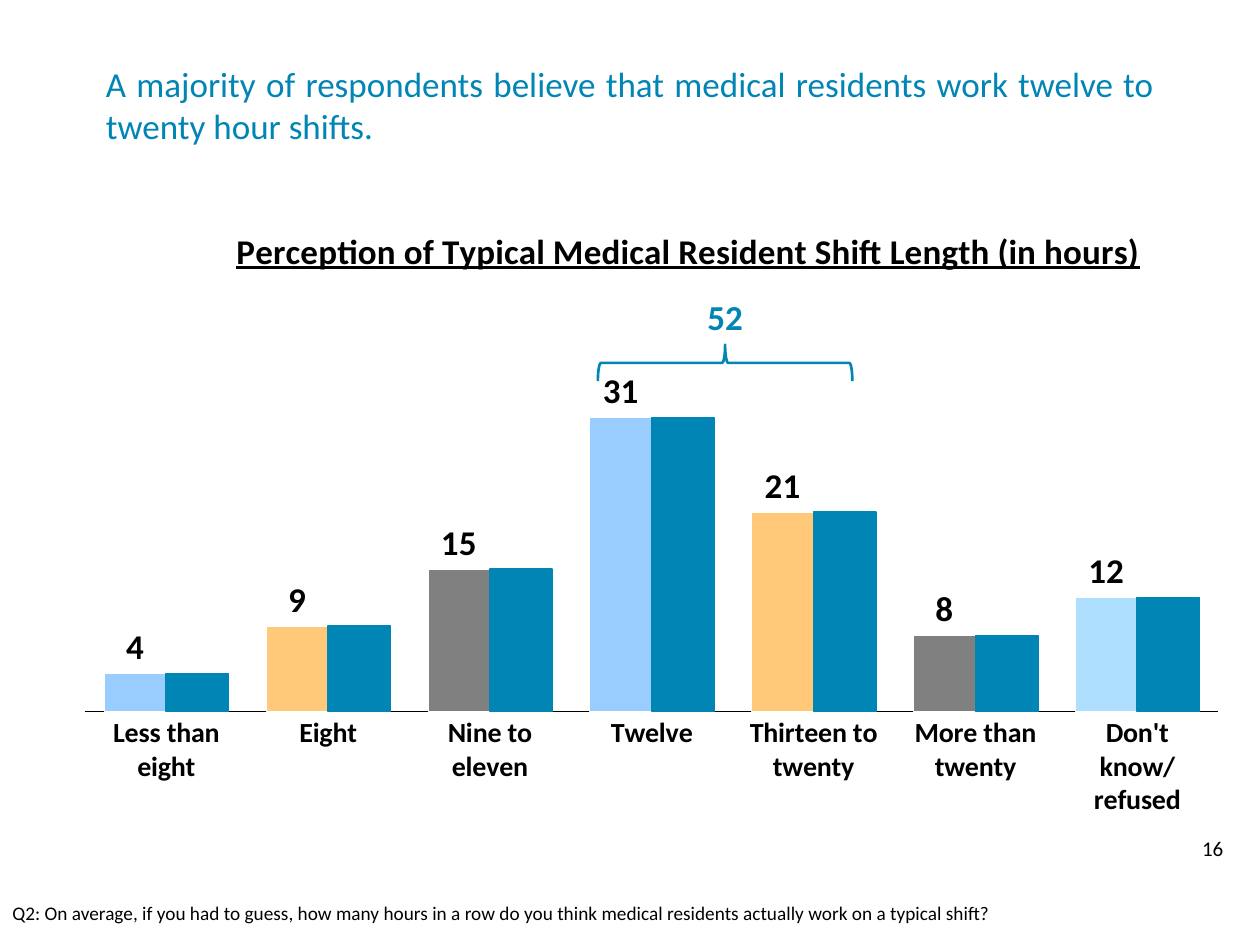
"""Builds the slide on perceived shift length of medical residents."""
from copy import deepcopy

from lxml import etree
from pptx import Presentation
from pptx.chart.data import CategoryChartData
from pptx.dml.color import RGBColor
from pptx.enum.chart import XL_CHART_TYPE, XL_LABEL_POSITION, XL_TICK_MARK
from pptx.enum.shapes import MSO_SHAPE
from pptx.enum.text import MSO_ANCHOR, PP_ALIGN
from pptx.oxml.ns import qn
from pptx.util import Inches, Pt

COLUMN = XL_CHART_TYPE.COLUMN_CLUSTERED
OUTSIDE = XL_LABEL_POSITION.OUTSIDE_END
NO_TICK = XL_TICK_MARK.NONE
RIGHT_BRACE = MSO_SHAPE.RIGHT_BRACE
MIDDLE = MSO_ANCHOR.MIDDLE
LEFT, CENTER, JUSTIFY = PP_ALIGN.LEFT, PP_ALIGN.CENTER, PP_ALIGN.JUSTIFY

FONT = "Calibri"
BLACK = RGBColor(0x00, 0x00, 0x00)
WHITE = RGBColor(0xFF, 0xFF, 0xFF)
TEAL = RGBColor(0x00, 0x85, 0xB4)
PALE = RGBColor(0xAF, 0xDF, 0xFF)
BLUE = RGBColor(0x99, 0xCC, 0xFF)
ORANGE = RGBColor(0xFF, 0xC9, 0x79)
GRAY = RGBColor(0x80, 0x80, 0x80)

SHIFTS = {
    "Less than eight": 4,
    "Eight": 9,
    "Nine to eleven": 15,
    "Twelve": 31,
    "Thirteen to twenty": 21,
    "More than twenty": 8,
    "Don't know/refused": 12,
}


class SlideBuilder:
    """Holds the style and the current slide."""

    def __init__(self, prs):
        self.slide = prs.slides.add_slide(prs.slide_layouts[5])

    def style(self, font, size, color=BLACK, bold=False):
        font.name = FONT
        font.size = Pt(size)
        font.bold = bold
        font.color.rgb = color

    def fill_text(self, sp, text, size, color, align, bold=False):
        tf = sp.text_frame
        tf.word_wrap = True
        tf.text = text
        p = tf.paragraphs[0]
        p.alignment = align
        self.style(p.runs[0].font, size, color, bold)

    def title(self, text, x, y, w, h):
        sp = self.slide.shapes.title
        sp.left, sp.top, sp.width, sp.height = map(Inches, (x, y, w, h))
        sp.text_frame.vertical_anchor = MIDDLE
        self.fill_text(sp, text, 20, TEAL, JUSTIFY)

    def text(self, text, x, y, w, h, size, color=BLACK, align=LEFT, bold=False):
        sp = self.slide.shapes.add_textbox(*map(Inches, (x, y, w, h)))
        self.fill_text(sp, text, size, color, align, bold)

    def brace(self, x, y, w, h):
        sp = self.slide.shapes.add_shape(RIGHT_BRACE, *map(Inches, (x, y, w, h)))
        sp.rotation = 270
        sp.shadow.inherit = False
        sp.fill.background()
        sp.line.color.rgb = TEAL
        sp.line.width = Pt(1.5)

    def place(self, parent, index, **values):
        for old in parent.findall(qn("c:layout")):
            parent.remove(old)
        layout = etree.Element(qn("c:layout"))
        manual = etree.SubElement(layout, qn("c:manualLayout"))
        for tag, value in values.items():
            etree.SubElement(manual, qn(f"c:{tag}")).set("val", str(value))
        parent.insert(index, layout)

    def paint(self, fmt, fill, line, width):
        fmt.fill.solid()
        fmt.fill.fore_color.rgb = fill
        fmt.line.color.rgb = line
        fmt.line.width = Pt(width)

    def split_axes(self, area):
        bars = area.find(qn("c:barChart"))
        cat, val = area.find(qn("c:catAx")), area.find(qn("c:valAx"))
        bars2, cat2, val2 = map(deepcopy, (bars, cat, val))
        bars.remove(bars.findall(qn("c:ser"))[1])
        bars2.remove(bars2.find(qn("c:ser")))
        for ref, number in zip(bars2.findall(qn("c:axId")), ("5001", "5002")):
            ref.set("val", number)
        for axis, own, other in ((cat2, "5001", "5002"), (val2, "5002", "5001")):
            axis.find(qn("c:axId")).set("val", own)
            axis.find(qn("c:crossAx")).set("val", other)
            axis.find(qn("c:delete")).set("val", "1")
        val2.find(qn("c:axPos")).set("val", "r")
        val2.find(qn("c:crosses")).set("val", "max")
        bars.addnext(bars2)
        val.addnext(cat2)
        cat2.addnext(val2)

    def chart(self, title, values, point_colors, x, y, w, h):
        data = CategoryChartData()
        data.categories = list(values)
        for name in ("Series 1", "Series 2"):
            data.add_series(name, list(values.values()))
        frame = self.slide.shapes.add_chart(COLUMN, *map(Inches, (x, y, w, h)), data)
        chart = frame.chart
        self.style(chart.font, 16)
        chart.has_legend = False

        tf = chart.chart_title.text_frame
        tf.text = title
        font = tf.paragraphs[0].runs[0].font
        self.style(font, 20, bold=True)
        font.underline = True
        self.place(chart.chart_title._element, 1, xMode="edge", yMode="edge",
                   x=0.14, y=0.01)

        plot = chart.plots[0]
        plot.gap_width = 60
        plot.overlap = 0
        plot.vary_by_categories = False
        area = chart._chartSpace.chart.plotArea
        self.place(area, 0, layoutTarget="inner", xMode="edge", yMode="edge",
                   x=0.016, y=0.277, w=0.971, h=0.556)

        axis = chart.value_axis
        axis.minimum_scale, axis.maximum_scale = 0, 35
        axis.has_major_gridlines = False
        axis.visible = False
        axis = chart.category_axis
        axis.major_tick_mark = NO_TICK
        axis.format.line.color.rgb = BLACK
        axis.format.line.width = Pt(0.25)
        self.style(axis.tick_labels.font, 16, bold=True)

        first, second = plot.series
        self.paint(first.format, PALE, WHITE, 0.25)
        self.paint(second.format, TEAL, TEAL, 1)
        for i, color in enumerate(point_colors):
            self.paint(first.points[i].format, color, WHITE, 0.25)
        labels = first.data_labels
        labels.show_value = True
        labels.position = OUTSIDE
        self.style(labels.font, 20, bold=True)
        self.split_axes(area)


def main():
    prs = Presentation()
    prs.slide_width, prs.slide_height = Inches(10), Inches(7.5)
    s = SlideBuilder(prs)
    s.title("A majority of respondents believe that medical residents work "
            "twelve to twenty hour shifts.", 0.74, 0.25, 8.52, 1.16)
    s.text("16", 9.25, 6.58, 0.75, 0.33, 12, align=CENTER)
    s.chart("Perception of Typical Medical Resident Shift Length (in hours)",
            SHIFTS, [BLUE, ORANGE, GRAY] * 2, 0.53, 1.7, 9.26, 4.79)
    s.text("Q2: On average, if you had to guess, how many hours in a row do you "
           "think medical residents actually work on a typical shift?",
           0, 7.1, 8.67, 0.29, 11)
    s.brace(5.61, 1.87, 0.29, 2.02)
    s.text("52", 5.44, 2.3, 0.63, 0.44, 20, TEAL, CENTER, True)
    prs.save("out.pptx")


if __name__ == "__main__":
    main()
